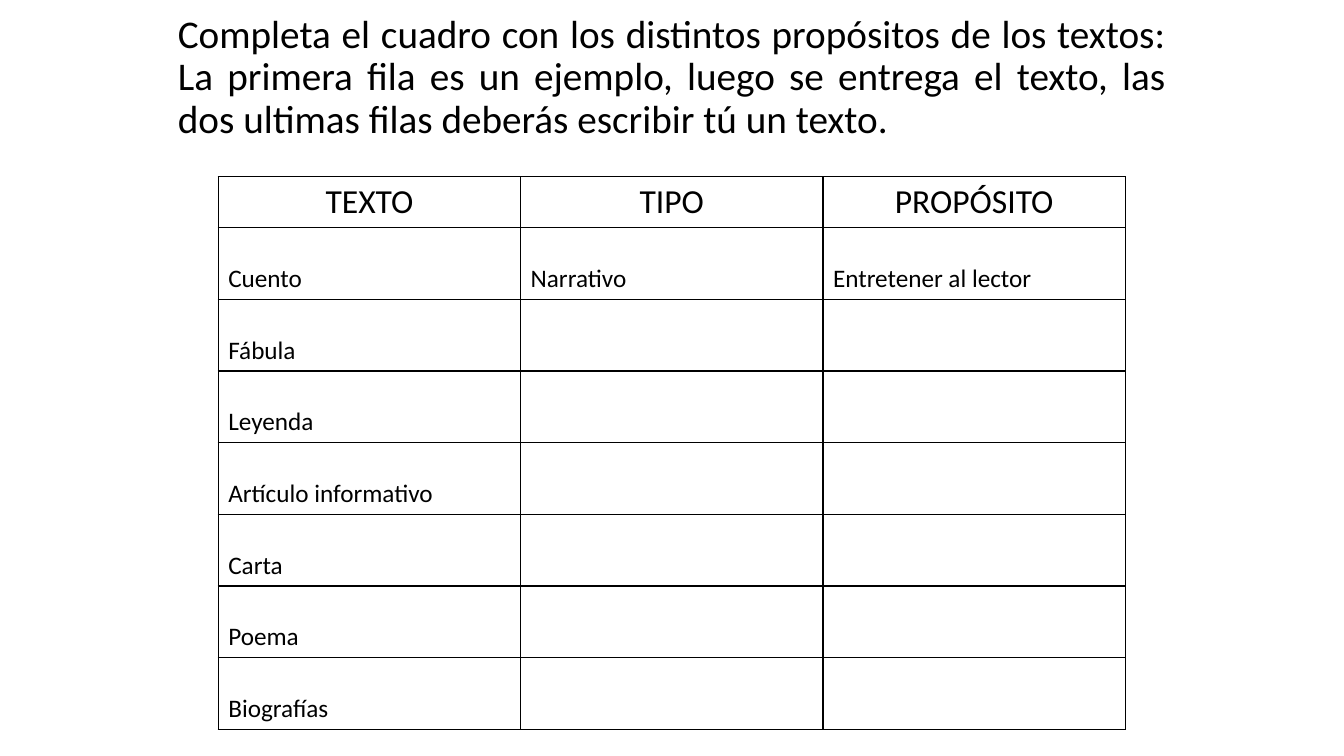
import pptx
import pptx.dml.color
import pptx.enum.text
import pptx.oxml
import pptx.oxml.ns
import pptx.util

Cm = pptx.util.Cm
Pt = pptx.util.Pt
ALIGN = pptx.enum.text.PP_ALIGN
ANCHOR = pptx.enum.text.MSO_ANCHOR

BLACK = pptx.dml.color.RGBColor(0x00, 0x00, 0x00)
WHITE = pptx.dml.color.RGBColor(0xFF, 0xFF, 0xFF)

TITLE_FONT = {"name": "Calibri", "size": Pt(28), "bold": False}
HEADER_FONT = {"name": "Calibri", "size": Pt(24), "bold": False}
BODY_FONT = {"name": "Calibri", "size": Pt(18), "bold": False}

INSTRUCTION = (
    "Completa el cuadro con los distintos propósitos de los textos: "
    "La primera fila es un ejemplo, luego se entrega el texto, "
    "las dos ultimas filas deberás escribir tú un texto."
)
ROWS = [
    ("TEXTO", "TIPO", "PROPÓSITO"),
    ("Cuento", "Narrativo", "Entretener al lector"),
    ("Fábula", "", ""),
    ("Leyenda", "", ""),
    ("Artículo informativo", "", ""),
    ("Carta", "", ""),
    ("Poema", "", ""),
    ("Biografías", "", ""),
]


def format_font(font, values):
    for name, value in values.items():
        setattr(font, name, value)
    font.color.rgb = BLACK


def add_borders(cell, color, width):
    """Put a solid line on each side of a table cell, ahead of its fill."""
    properties = cell._tc.get_or_add_tcPr()
    for position, side in enumerate(("lnL", "lnR", "lnT", "lnB")):
        line = pptx.oxml.parse_xml(
            f'<a:{side} {pptx.oxml.ns.nsdecls("a")} w="{int(width)}">'
            f'<a:solidFill><a:srgbClr val="{color}"/></a:solidFill></a:{side}>'
        )
        properties.insert(position, line)


def fill_title(page, left, top, width, height):
    title = page.shapes.title
    box = {"left": left, "top": top, "width": width, "height": height}
    for name, value in box.items():
        setattr(title, name, value)
    frame = title.text_frame
    frame.text = INSTRUCTION
    frame.auto_size = pptx.enum.text.MSO_AUTO_SIZE.NONE
    frame.vertical_anchor = ANCHOR.MIDDLE
    para = frame.paragraphs[0]
    para.alignment = ALIGN.JUSTIFY
    para.line_spacing = 0.9
    format_font(para.runs[0].font, TITLE_FONT)


def add_purpose_table(page, left, top, width, height, header_height):
    row_count, column_count = len(ROWS), len(ROWS[0])
    table = page.shapes.add_table(
        row_count, column_count, left, top, width, height
    ).table
    table.first_row = False
    table.horz_banding = False

    # Equal columns; the body rows share what the header leaves
    for column in table.columns:
        column.width = width // column_count
    for row in table.rows:
        row.height = (height - header_height) // (row_count - 1)
    table.rows[0].height = header_height

    # Cell text, fill and borders
    for row_index, texts in enumerate(ROWS):
        is_header = row_index == 0
        for column_index, text in enumerate(texts):
            cell = table.cell(row_index, column_index)
            cell.text = text
            cell.vertical_anchor = ANCHOR.TOP if is_header else ANCHOR.BOTTOM
            para = cell.text_frame.paragraphs[0]
            para.alignment = ALIGN.CENTER if is_header else ALIGN.LEFT
            format_font(para.font, HEADER_FONT if is_header else BODY_FONT)
            for span in para.runs:
                format_font(span.font, HEADER_FONT if is_header else BODY_FONT)
            cell.fill.solid()
            cell.fill.fore_color.rgb = WHITE
            add_borders(cell, BLACK, Pt(1))


def main():
    deck = pptx.Presentation()
    deck.slide_width = Cm(33.87)
    deck.slide_height = Cm(19.05)
    page = deck.slides.add_slide(deck.slide_layouts[5])
    fill_title(page, Cm(4.23), Cm(0), Cm(25.4), Cm(3.94))
    add_purpose_table(page, Cm(5.5), Cm(4.45), Cm(22.86), Cm(13.93), Cm(1.29))
    deck.save("out.pptx")


if __name__ == "__main__":
    main()
